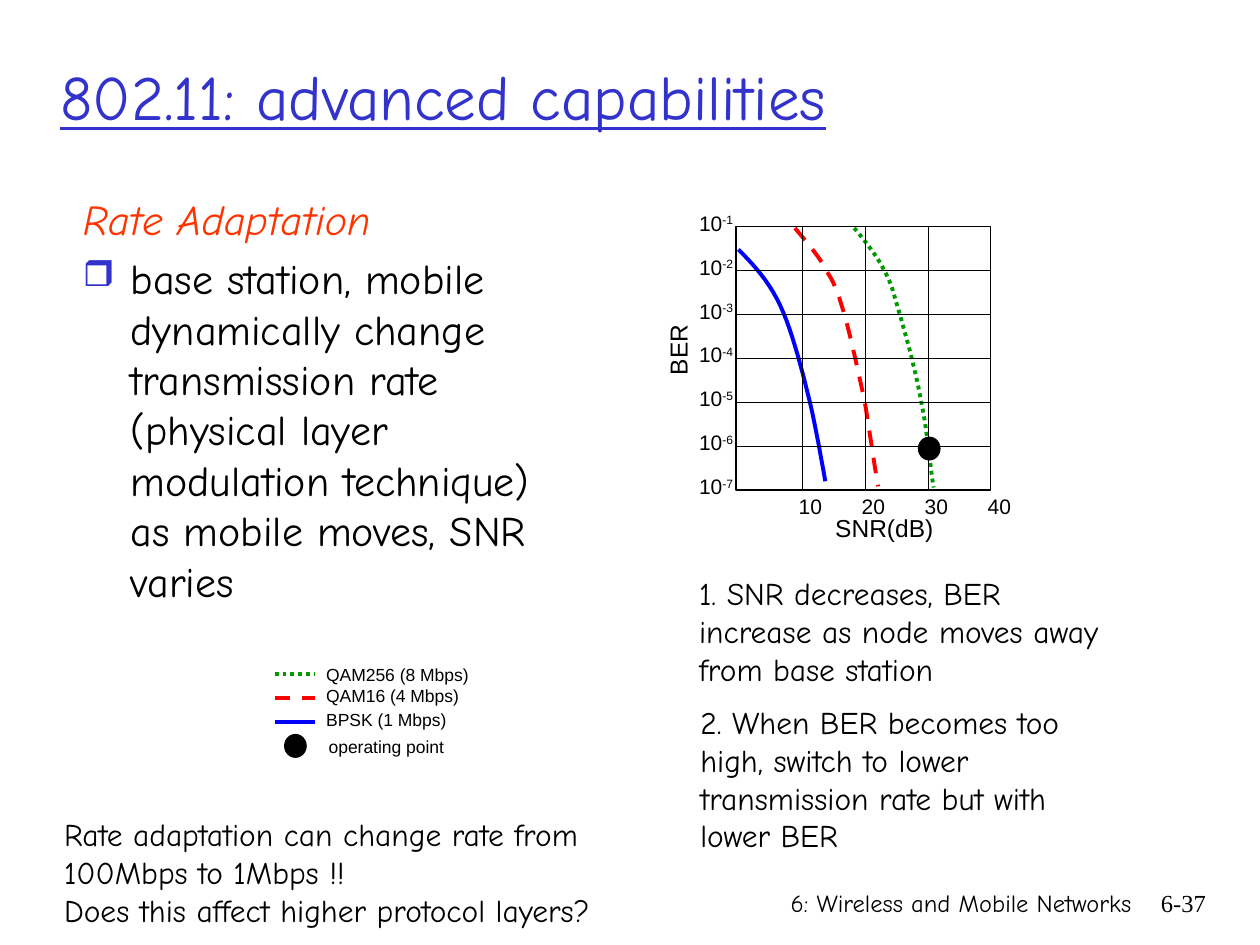
from lxml.etree import SubElement
from pptx import Presentation
from pptx.dml.color import RGBColor
from pptx.enum.dml import MSO_LINE
from pptx.enum.shapes import MSO_CONNECTOR, MSO_SHAPE
from pptx.enum.text import MSO_ANCHOR, MSO_AUTO_SIZE, PP_ALIGN
from pptx.oxml.ns import qn
from pptx.util import Inches, Pt

COLORS = {
    "black": "000000",
    "title": "3333CC",
    "accent": "FF3300",
    "bpsk": "0000FF",
    "qam16": "FF0000",
    "qam256": "009900",
}
HAND, SANS, SERIF = "Comic Neue", "Arial", "Times New Roman"

# Plot area: six decades of BER by four steps of 10 dB
PLOT_LEFT, PLOT_TOP, PLOT_WIDTH, PLOT_HEIGHT = 5.84, 1.8, 2.02, 2.09
DECADES = 6
ROW = PLOT_HEIGHT / DECADES
ORIGIN, COLUMN = 5.87, 0.5

# Freeform points are whole numbers, so curves are drawn in thousandths
UNITS_PER_INCH = 1000

DASHES = {"bpsk": None, "qam16": MSO_LINE.DASH, "qam256": MSO_LINE.ROUND_DOT}

# Start point, then Bezier segments of two control points and an end point
CURVES = {
    "bpsk": [(5.86, 1.98),
             (5.98, 2.1), (6.1, 2.23), (6.19, 2.42),
             (6.28, 2.61), (6.35, 2.88), (6.41, 3.12),
             (6.47, 3.35), (6.53, 3.71), (6.55, 3.82)],
    "qam16": [(6.31, 1.81),
              (6.4, 1.92), (6.5, 2.03), (6.56, 2.15),
              (6.63, 2.26), (6.65, 2.32), (6.7, 2.49),
              (6.75, 2.66), (6.81, 2.94), (6.86, 3.17),
              (6.9, 3.4), (6.93, 3.63), (6.97, 3.86)],
    "qam256": [(6.78, 1.81),
               (6.87, 1.92), (6.96, 2.03), (7.02, 2.15),
               (7.08, 2.26), (7.09, 2.32), (7.14, 2.49),
               (7.19, 2.66), (7.27, 2.95), (7.31, 3.18),
               (7.36, 3.41), (7.39, 3.76), (7.41, 3.87)],
}


def color(name):
    return RGBColor.from_string(COLORS[name])


def format_text(paragraph, size, font=HAND, name="black"):
    for span in paragraph.runs:
        span.font.size = Pt(size)
        span.font.name = font
        span.font.color.rgb = color(name)


def add_text(slide, text, left, top, width, height, size, font=HAND,
             wrap=True, align=PP_ALIGN.LEFT):
    box = slide.shapes.add_textbox(*map(Inches, (left, top, width, height)))
    frame = box.text_frame
    frame.text = text
    frame.word_wrap = wrap
    if not wrap:
        frame.auto_size = MSO_AUTO_SIZE.SHAPE_TO_FIT_TEXT
    for para in frame.paragraphs:
        para.alignment = align
        format_text(para, size, font)
    return box


def style_line(line, name="black", width=0.75, dash=None):
    line.color.rgb = color(name)
    line.width = Pt(width)
    if dash:
        line.dash_style = dash


def add_line(slide, start, end, **style):
    line = slide.shapes.add_connector(
        MSO_CONNECTOR.STRAIGHT, *map(Inches, (*start, *end)))
    style_line(line.line, **style)
    SubElement(line._element.spPr, qn("a:effectLst"))


def add_operating_point(slide, left, top):
    dot = slide.shapes.add_shape(
        MSO_SHAPE.OVAL, *map(Inches, (left, top, 0.17, 0.18)))
    dot.shadow.inherit = False
    dot.fill.solid()
    dot.fill.fore_color.rgb = color("black")
    style_line(dot.line)


def bezier_points(points, steps=10):
    """Sample a chain of cubic Bezier segments, leaving out the start."""
    for first in range(0, len(points) - 1, 3):
        segment = points[first:first + 4]
        for step in range(1, steps + 1):
            t = step / steps
            weights = ((1 - t) ** 3, 3 * t * (1 - t) ** 2,
                       3 * t ** 2 * (1 - t), t ** 3)
            yield tuple(sum(w * p[axis] for w, p in zip(weights, segment))
                        for axis in (0, 1))


def add_curve(slide, name):
    points = [(x * UNITS_PER_INCH, y * UNITS_PER_INCH)
              for x, y in CURVES[name]]
    builder = slide.shapes.build_freeform(
        *points[0], scale=Inches(1) / UNITS_PER_INCH)
    builder.add_line_segments(bezier_points(points), close=False)
    curve = builder.convert_to_shape()
    curve.shadow.inherit = False
    curve.fill.background()
    style_line(curve.line, name, 2.25, DASHES[name])


def add_title(slide):
    title = slide.shapes.title
    title.left, title.top, title.width, title.height = map(
        Inches, (0.38, 0.3, 8.5, 0.92))
    frame = title.text_frame
    frame.text = "802.11: advanced capabilities"
    frame.auto_size = MSO_AUTO_SIZE.NONE
    frame.vertical_anchor = MSO_ANCHOR.MIDDLE
    para = frame.paragraphs[0]
    para.alignment = PP_ALIGN.LEFT
    format_text(para, 36, name="title")
    para.runs[0].font.underline = True


def add_bullet(para):
    properties = para._p.get_or_add_pPr()
    bullet_color = SubElement(properties, qn("a:buClr"))
    SubElement(bullet_color, qn("a:srgbClr"), val=COLORS["title"])
    SubElement(properties, qn("a:buSzPct"), val="85000")
    SubElement(properties, qn("a:buChar"), char="❒")


def add_body(slide):
    body = add_text(
        slide,
        "Rate Adaptation\nbase station, mobile dynamically change "
        "transmission rate (physical layer modulation technique) "
        "as mobile moves, SNR varies",
        0.56, 1.49, 4.1, 5.08, 24)
    heading, item = body.text_frame.paragraphs
    for para in (heading, item):
        para.space_before = Pt(4.8)
        properties = para._p.get_or_add_pPr()
        properties.set("marL", str(Inches(0.38)))
        properties.set("indent", str(-Inches(0.38)))
    format_text(heading, 24, name="accent")
    heading.runs[0].font.italic = True
    add_bullet(item)


def add_legend(slide):
    entries = [("qam256", "QAM256 (8 Mbps)", 5.22, 1.33),
               ("qam16", "QAM16 (4 Mbps)", 5.39, 1.26),
               ("bpsk", "BPSK (1 Mbps)", 5.58, 1.15)]
    for row, (name, label, top, width) in enumerate(entries):
        y = 5.35 + 0.19 * row
        add_line(slide, (2.18, y), (2.5, y),
                 name=name, width=2.25, dash=DASHES[name])
        add_text(slide, label, 2.49, top, width, 0.27, 10, SANS, wrap=False)
    add_operating_point(slide, 2.26, 5.83)
    add_text(slide, "operating point", 2.51, 5.79, 1.12, 0.27, 10, SANS,
             wrap=False)


def add_plot(slide):
    right, bottom = PLOT_LEFT + PLOT_WIDTH, PLOT_TOP + PLOT_HEIGHT
    for name in CURVES:
        add_curve(slide, name)
    border = slide.shapes.add_shape(MSO_SHAPE.RECTANGLE, *map(
        Inches, (PLOT_LEFT, PLOT_TOP, PLOT_WIDTH, PLOT_HEIGHT)))
    border.shadow.inherit = False
    border.fill.background()
    style_line(border.line)

    for decade in range(DECADES + 1):
        y = PLOT_TOP + ROW * decade
        if 0 < decade < DECADES:
            add_line(slide, (PLOT_LEFT, y), (right, y))
        label = add_text(slide, "10", 5.45, y - 0.18, 0.48, 0.3, 12, SANS,
                         wrap=False)
        para = label.text_frame.paragraphs[0]
        exponent = para.add_run()
        exponent.text = f"-{decade + 1}"
        format_text(para, 12, SANS)
        exponent.font._element.set("baseline", "30000")

    for step in range(1, 5):
        x = ORIGIN + COLUMN * step
        if step < 4:
            add_line(slide, (x, PLOT_TOP), (x, bottom))
        add_text(slide, str(10 * step), x - 0.13, bottom - 0.02, 0.39, 0.3,
                 12, SANS, wrap=False)

    add_text(slide, "SNR(dB)", 6.53, 4.02, 0.98, 0.33, 14, SANS, wrap=False)
    axis_title = add_text(slide, "BER", 5.08, 2.61, 0.6, 0.33, 14, SANS,
                          wrap=False)
    axis_title.rotation = 270
    add_operating_point(slide, 7.29, 3.47)


def main():
    deck = Presentation()
    deck.slide_width, deck.slide_height = Inches(10), Inches(7.5)
    slide = deck.slides.add_slide(deck.slide_layouts[5])
    add_title(slide)
    add_body(slide)
    add_legend(slide)
    add_plot(slide)
    add_text(slide, "1. SNR decreases, BER increase as node moves away "
             "from base station", 5.45, 4.51, 3.5, 1, 18)
    add_text(slide, "2. When BER becomes too high, switch to lower "
             "transmission rate but with lower BER", 5.46, 5.53, 3.5, 1.3, 18)
    add_text(slide, "Rate adaptation can change rate from\n"
             "100Mbps to 1Mbps !!\nDoes this affect higher protocol layers?",
             0.41, 6.42, 4.91, 1, 18, wrap=False)
    add_text(slide, "6: Wireless and Mobile Networks", 4.86, 7, 4.22, 0.5, 14,
             align=PP_ALIGN.RIGHT)
    add_text(slide, "6-37", 8.93, 7, 0.74, 0.5, 14, SERIF,
             align=PP_ALIGN.RIGHT)
    deck.save("out.pptx")


if __name__ == "__main__":
    main()
